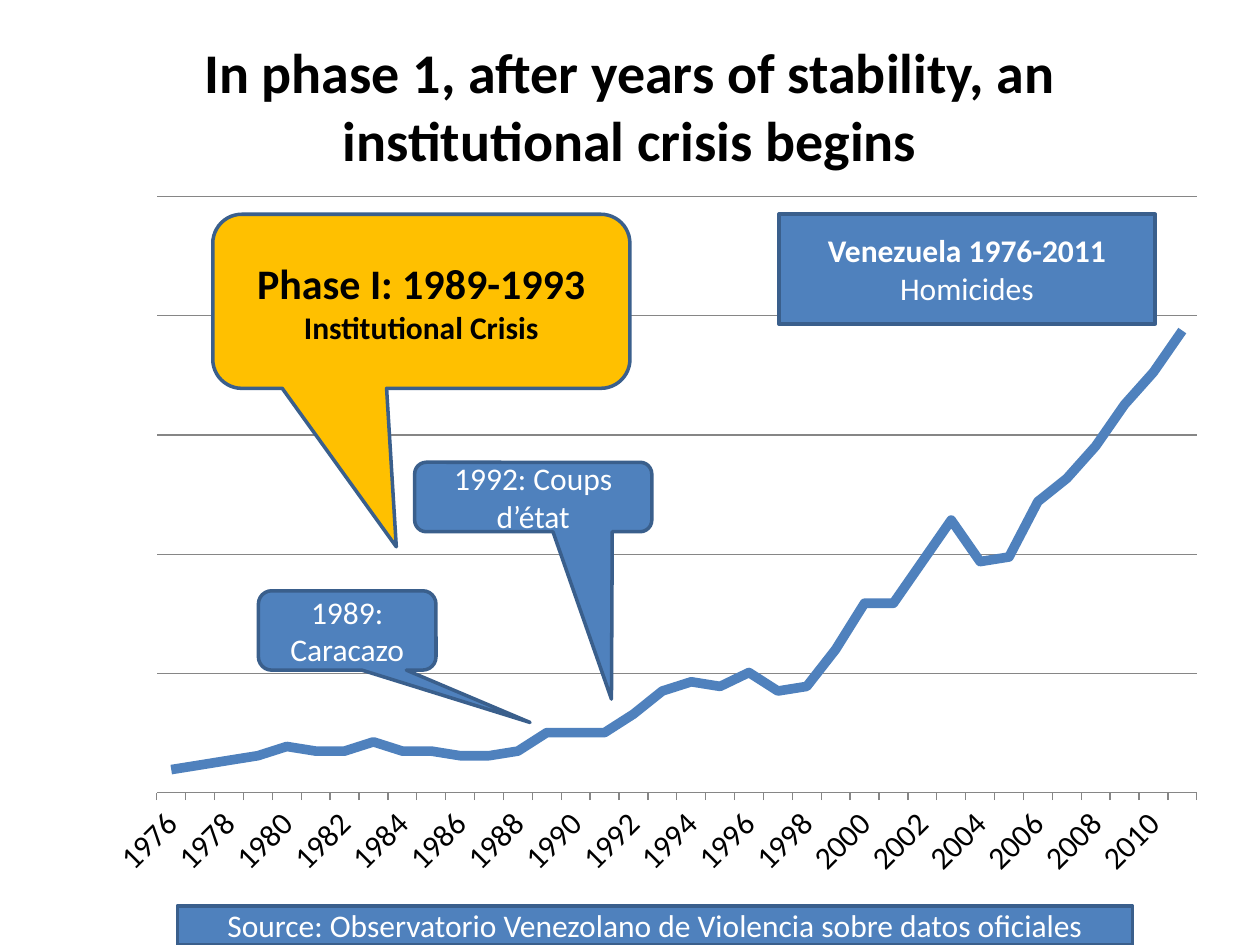
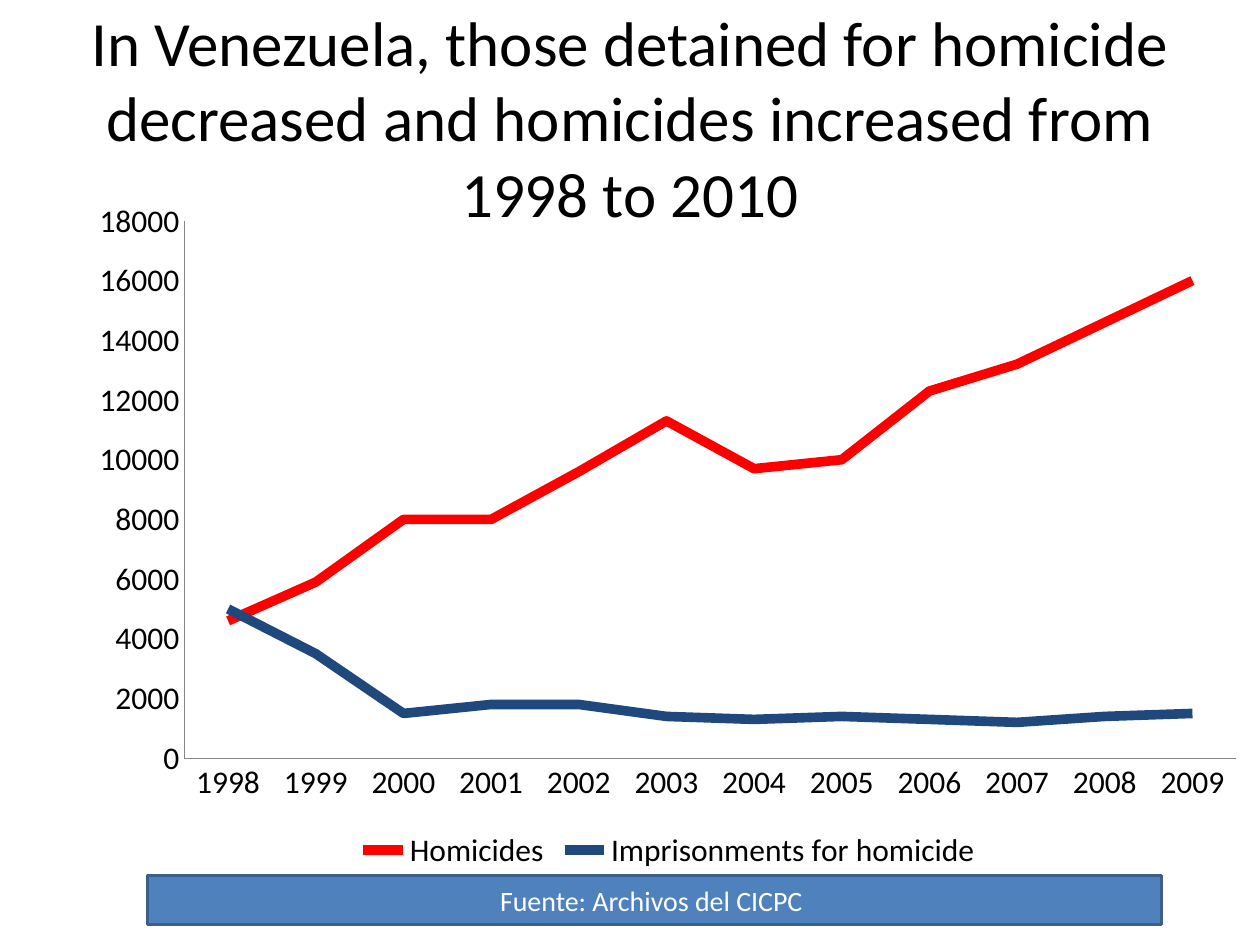
import pptx
import pptx.chart.data
import pptx.dml.color
import pptx.enum.chart
import pptx.enum.shapes
import pptx.enum.text
import pptx.oxml
import pptx.oxml.ns
import pptx.util

Cm = pptx.util.Cm
Pt = pptx.util.Pt
CHART = pptx.enum.chart
SHAPE = pptx.enum.shapes.MSO_SHAPE

COLOURS = {
    "text": "000000",
    "light": "FFFFFF",
    "blue": "4F81BD",
    "outline": "3A5F8C",
    "amber": "FFC000",
    "red": "FF0000",
    "navy": "1F497D",
    "axis": "868686",
}
FONT = "Calibri"


def rgb(name):
    return pptx.dml.color.RGBColor.from_string(COLOURS[name])


def apply(target, values):
    """Set each named attribute of target."""
    for name, value in values.items():
        setattr(target, name, value)


class Deck:
    """Holds the shared style and the slide being built."""

    def __init__(self):
        self.prs = pptx.Presentation()
        apply(self.prs, {"slide_width": Cm(25.4), "slide_height": Cm(19.05)})
        self.slide = None

    def new_slide(self):
        self.slide = self.prs.slides.add_slide(self.prs.slide_layouts[6])

    def fill_text(self, frame, paragraphs, colour):
        """Fill a frame; each paragraph is a list of (text, size, bold) runs."""
        apply(frame, {"word_wrap": True,
                      "vertical_anchor": pptx.enum.text.MSO_ANCHOR.MIDDLE})
        for index, runs in enumerate(paragraphs):
            paragraph = frame.add_paragraph() if index else frame.paragraphs[0]
            paragraph.alignment = pptx.enum.text.PP_ALIGN.CENTER
            for text, size, bold in runs:
                run = paragraph.add_run()
                run.text = text
                apply(run.font, {"name": FONT, "size": Pt(size), "bold": bold})
                run.font.color.rgb = rgb(colour)

    def title(self, text, top, size, bold=False):
        box = self.slide.shapes.add_textbox(Cm(1.27), Cm(top), Cm(22.86), Cm(3.18))
        self.fill_text(box.text_frame, [[(text, size, bold)]], "text")

    def box(self, at, paragraphs, fill="blue", colour="light", pointer=None):
        """Add a rectangle, or a rounded callout when a pointer is given."""
        kind = SHAPE.ROUNDED_RECTANGULAR_CALLOUT if pointer else SHAPE.RECTANGLE
        shape = self.slide.shapes.add_shape(kind, *map(Cm, at))
        shape.shadow.inherit = False
        shape.fill.solid()
        shape.fill.fore_color.rgb = rgb(fill)
        shape.line.color.rgb = rgb("outline")
        shape.line.width = Pt(2)
        for index, value in enumerate((*pointer, 0.167) if pointer else ()):
            shape.adjustments[index] = value
        self.fill_text(shape.text_frame, paragraphs, colour)

    def line_chart(self, at, years, series, plot, axis_max, axis_step):
        """Add a line chart; series maps a name to (colour, values)."""
        data = pptx.chart.data.CategoryChartData()
        data.categories = [str(year) for year in years]
        for name, (_, values) in series.items():
            data.add_series(name, values)
        chart = self.slide.shapes.add_chart(
            CHART.XL_CHART_TYPE.LINE, *map(Cm, at), data).chart
        apply(chart, {"has_title": False, "has_legend": False})
        apply(chart.font, {"name": FONT, "size": Pt(18)})
        chart.font.color.rgb = rgb("text")
        chart.plots[0].vary_by_categories = False
        for line, (colour, _) in zip(chart.plots[0].series, series.values()):
            line.smooth = False
            line.format.line.width = Pt(5.5)
            line.format.line.color.rgb = rgb(colour)
        apply(chart.value_axis, {
            "minimum_scale": 0, "maximum_scale": axis_max, "major_unit": axis_step,
            "has_major_gridlines": False,
            "major_tick_mark": CHART.XL_TICK_MARK.NONE})
        chart.category_axis.major_tick_mark = CHART.XL_TICK_MARK.NONE
        for axis in (chart.value_axis, chart.category_axis):
            axis.format.line.color.rgb = rgb("axis")
        self.place_plot(chart, plot)
        return chart

    def place_plot(self, chart, plot):
        """Fix the inner plot area as fractions of the chart."""
        area = chart._chartSpace.xpath("c:chart/c:plotArea")[0]
        for layout in area.xpath("c:layout"):
            area.remove(layout)
        sizes = "".join(f'<c:{key} val="{value}"/>' for key, value in zip("xywh", plot))
        area.insert(0, pptx.oxml.parse_xml(
            f'<c:layout {pptx.oxml.ns.nsdecls("c")}><c:manualLayout>'
            '<c:layoutTarget val="inner"/><c:xMode val="edge"/><c:yMode val="edge"/>'
            f'{sizes}</c:manualLayout></c:layout>'))

    def slant_labels(self, chart, every):
        """Turn the category labels by 45 degrees and show one in `every`."""
        chart.category_axis.tick_labels.font.size = Pt(18)
        axis = chart._chartSpace.xpath(".//c:catAx")[0]
        axis.xpath("c:txPr/a:bodyPr")[0].set("rot", "-2700000")
        axis.xpath("c:noMultiLvlLbl")[0].addprevious(pptx.oxml.parse_xml(
            f'<c:tickLblSkip {pptx.oxml.ns.nsdecls("c")} val="{every}"/>'))


def crisis_slide(deck):
    deck.new_slide()
    deck.title("In phase 1, after years of stability, an institutional crisis begins",
               0.53, 32, True)
    homicides = [5, 6, 7, 8, 10, 9, 9, 11, 9, 9, 8, 8, 9, 13, 13, 13, 17, 22,
                 24, 23, 26, 22, 23, 31, 41, 41, 50, 59, 50, 51, 63, 68, 75, 84, 91, 100]
    chart = deck.line_chart((0.51, 3.53, 24.1, 14.48), range(1976, 2012),
                            {"Series 1": ("blue", homicides)},
                            (0.11, 0.03, 0.87, 0.83), 129, 25.8)
    apply(chart.value_axis, {"visible": False, "has_major_gridlines": True})
    chart.value_axis.major_gridlines.format.line.color.rgb = rgb("axis")
    apply(chart.value_axis.tick_labels, {"number_format": "#,##0",
                                         "number_format_is_linked": False})
    chart.category_axis.major_tick_mark = CHART.XL_TICK_MARK.OUTSIDE
    deck.slant_labels(chart, 2)

    deck.box((3.58, 18.26, 19.25, 0.79), [[(
        "Source: Observatorio Venezolano de Violencia sobre datos oficiales", 18, False)]])
    deck.box((5.21, 11.91, 3.58, 1.6),
             [[("1989:", 18, False)], [("Caracazo", 18, False)]], pointer=(1.03, 1.16))
    deck.box((8.36, 9.32, 4.78, 1.4),
             [[("1992: Coups d’état", 18, False)]], pointer=(0.33, 2.91))
    deck.box((4.29, 4.32, 8.41, 3.51),
             [[("Phase I: 1989-1993", 24, True)], [("Institutional Crisis", 18, True)]],
             "amber", "text", (-0.06, 1.41))
    deck.box((15.7, 4.32, 7.59, 2.21),
             [[("Venezuela 1976-2011 ", 18, True), ("Homicides", 18, False)]])


def detention_slide(deck):
    deck.new_slide()
    chart = deck.line_chart((1.57, 3.76, 23.83, 13.89), range(1998, 2010), {
        "Homicides": ("red", [4600, 5900, 8000, 8000, 9600, 11300,
                              9700, 10000, 12300, 13200, 14600, 16000]),
        "Imprisonments for homicide": ("navy", [5000, 3500, 1500, 1800, 1800, 1400,
                                                1300, 1400, 1300, 1200, 1400, 1500]),
    }, (0.09, 0.05, 0.89, 0.78), 18000, 2000)
    chart.has_legend = True
    apply(chart.legend, {"position": CHART.XL_LEGEND_POSITION.BOTTOM,
                         "include_in_layout": False})
    deck.box((2.97, 17.65, 20.45, 0.99), [[("Fuente: Archivos del CICPC ", 16, False)]])
    deck.title("In Venezuela, those detained for homicide decreased and homicides "
               "increased from 1998 to 2010", 0.76, 36)


def main():
    deck = Deck()
    crisis_slide(deck)
    detention_slide(deck)
    deck.prs.save("out.pptx")


if __name__ == "__main__":
    main()
